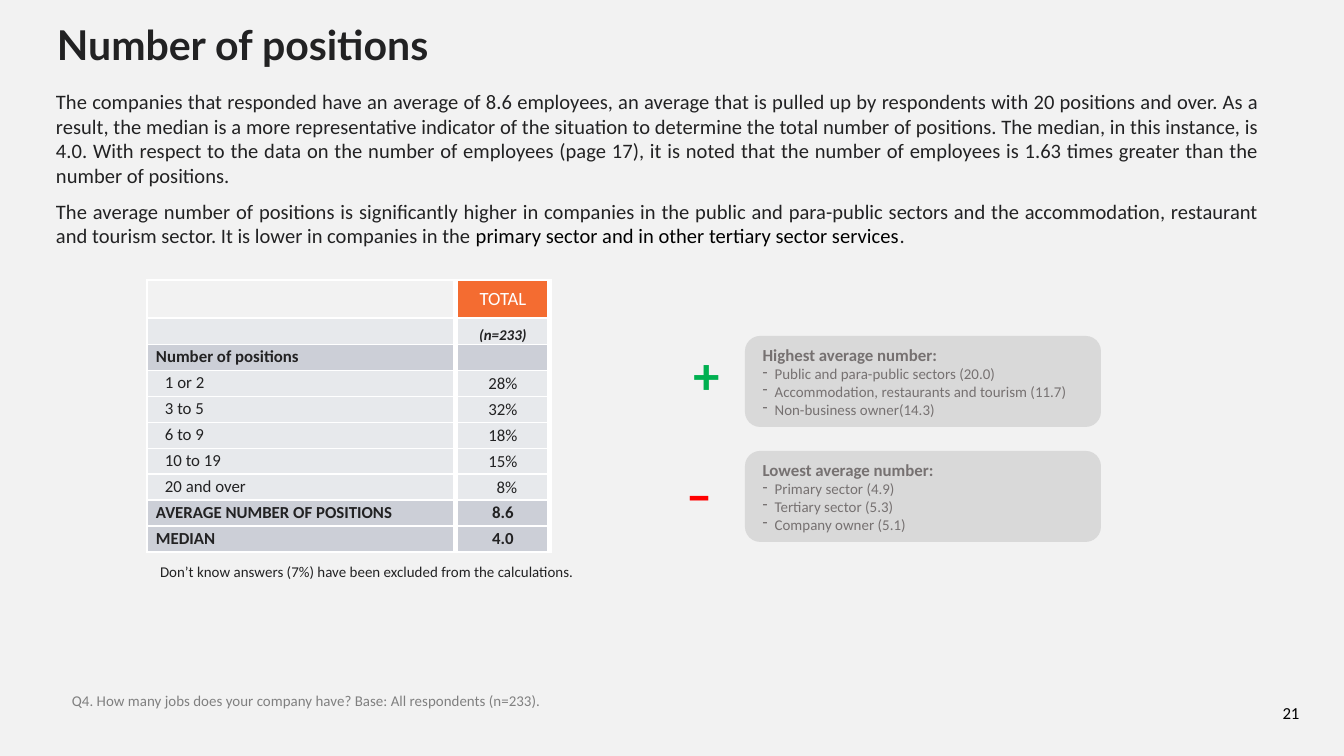
from lxml.etree import SubElement
from pptx import Presentation
from pptx.dml.color import RGBColor
from pptx.enum.shapes import MSO_SHAPE
from pptx.enum.text import MSO_ANCHOR, PP_ALIGN
from pptx.oxml import parse_xml
from pptx.oxml.ns import nsdecls, qn
from pptx.util import Emu, Pt

INK, WHITE, GREY = "222223", "FFFFFF", "767171"
LIGHT_ROW, DARK_ROW = "E7E9EC", "CCCFD7"


def px(length):
    return Emu(round(length * 914400 / 134.4))


def color(hex_value):
    return RGBColor.from_string(hex_value)


def add_run(paragraph, text, size, hex_value=INK, bold=False, italic=False, face="Calibri"):
    run = paragraph.add_run()
    run.text = text
    font = run.font
    font.name, font.size, font.bold, font.italic = face, Pt(size), bold, italic
    font.color.rgb = color(hex_value)


def set_insets(target, left, top, right, bottom):
    target.margin_left, target.margin_top = px(left), px(top)
    target.margin_right, target.margin_bottom = px(right), px(bottom)


def add_text_frame(slide, box, insets=(13, 7, 13, 7), anchor=MSO_ANCHOR.TOP):
    frame = slide.shapes.add_textbox(*map(px, box)).text_frame
    frame.word_wrap = True
    frame.vertical_anchor = anchor
    set_insets(frame, *insets)
    return frame


def add_line(slide, box, text, size, hex_value=INK, bold=False, align=PP_ALIGN.LEFT,
             anchor=MSO_ANCHOR.TOP, face="Calibri"):
    paragraph = add_text_frame(slide, box, anchor=anchor).paragraphs[0]
    paragraph.alignment = align
    add_run(paragraph, text, size, hex_value, bold, face=face)


def add_title(slide, box):
    frame = add_text_frame(slide, box, (10, 5, 10, 5), MSO_ANCHOR.MIDDLE)
    frame.paragraphs[0].line_spacing = 0.9
    add_run(frame.paragraphs[0], "Number of positions", 22, bold=True, face="Lato")


def add_commentary(slide, box):
    frame = add_text_frame(slide, box, (13, 0, 13, 0))
    average, sectors = frame.paragraphs[0], frame.add_paragraph()
    average.alignment = sectors.alignment = PP_ALIGN.JUSTIFY
    sectors.space_before = Pt(6)
    add_run(average, "The companies that responded have an average of 8.6 employees, an average "
            "that is pulled up by respondents with 20 positions and over. As a result, the median "
            "is a more representative indicator of the situation to determine the total number of "
            "positions. The median, in this instance, is 4.0. With respect to the data on the "
            "number of employees (page 17), it is noted that the number of employees is 1.63 times "
            "greater than the number of positions.", 11)
    add_run(sectors, "The average number of positions is significantly higher in companies in the "
            "public and para-public sectors and the accommodation, restaurant and tourism sector. "
            "It is lower in companies in the", 11)
    add_run(sectors, " primary sector and in other tertiary sector services", 11, "000000")
    add_run(sectors, ".", 11)


def set_borders(cell, **widths):
    properties = cell._tc.get_or_add_tcPr()
    for position, side in enumerate("LRTB"):
        properties.insert(position, parse_xml(
            f'<a:ln{side} {nsdecls("a")} w="{Pt(widths.get(side, 0.75))}">'
            f'<a:solidFill><a:srgbClr val="{WHITE}"/></a:solidFill></a:ln{side}>'))


def fill_cell(cell, text, fill, insets, size=9, hex_value=INK, bold=False, italic=False,
              align=PP_ALIGN.LEFT):
    cell.vertical_anchor = MSO_ANCHOR.MIDDLE
    set_insets(cell, *insets)
    if fill:
        cell.fill.solid()
        cell.fill.fore_color.rgb = color(fill)
    else:
        cell.fill.background()
    paragraph = cell.text_frame.paragraphs[0]
    paragraph.alignment = align
    if text:
        add_run(paragraph, text, size, hex_value, bold, italic)
    else:
        SubElement(paragraph._p, qn("a:endParaRPr")).set("sz", str(size * 100))


def add_positions_table(slide, box):
    answers = [("1 or 2", "28%"), ("3 to 5", "32%"), ("6 to 9", "18%"),
               ("10 to 19", "15%"), ("20 and over", "8%")]
    rows = [("Number of positions", ""), *answers,
            ("AVERAGE NUMBER OF POSITIONS", "8.6"), ("MEDIAN", "4.0")]
    table = slide.shapes.add_table(len(rows) + 2, 2, *map(px, box)).table
    table.first_row = table.horz_banding = False
    for column, width in zip(table.columns, (309, 94)):
        column.width = px(width)
    for index, row in enumerate(table.rows):
        row.height = px(26 if index else 38)

    # Header and base
    flat = (0, 0, 0, 0)
    fill_cell(table.cell(0, 0), "", None, flat)
    fill_cell(table.cell(0, 1), "TOTAL", "F46C31", flat, 10, WHITE, align=PP_ALIGN.CENTER)
    fill_cell(table.cell(1, 0), "", LIGHT_ROW, flat)
    base = table.cell(1, 1)
    fill_cell(base, "(n=233)", LIGHT_ROW, (17, 0, 17, 0), 8, bold=True, italic=True,
              align=PP_ALIGN.CENTER)
    base.text_frame.paragraphs[0].line_spacing = Pt(14)

    # Answers and summary rows
    for index, (label, value) in enumerate(rows, start=2):
        is_answer = (label, value) in answers
        fill = LIGHT_ROW if is_answer else DARK_ROW
        fill_cell(table.cell(index, 0), label, fill, (18 if is_answer else 9, 0, 9, 0),
                  bold=not is_answer)
        # A one-digit share is set under the units of the others
        left = 9 if value == "8%" else 1
        fill_cell(table.cell(index, 1), value, fill, (left, 1 if is_answer else 0, 1, 0),
                  bold=not is_answer, align=PP_ALIGN.CENTER)

    for index in range(len(table.rows)):
        set_borders(table.cell(index, 0), R=3)
        set_borders(table.cell(index, 1), L=3, R=3)


def add_callout(slide, box, heading, items):
    callout = slide.shapes.add_shape(MSO_SHAPE.ROUNDED_RECTANGLE, *map(px, box))
    callout.shadow.inherit = False
    callout.fill.solid()
    callout.fill.fore_color.rgb = color("D9D9D9")
    callout.line.fill.background()
    frame = callout.text_frame
    frame.word_wrap = True
    frame.vertical_anchor = MSO_ANCHOR.MIDDLE
    frame.paragraphs[0].alignment = PP_ALIGN.LEFT
    add_run(frame.paragraphs[0], heading, 9, GREY, bold=True)
    for item in items:
        paragraph = frame.add_paragraph()
        paragraph.alignment = PP_ALIGN.LEFT
        properties = paragraph._p.get_or_add_pPr()
        properties.set("marL", str(px(12)))
        properties.set("indent", str(-px(12)))
        SubElement(properties, qn("a:buChar")).set("char", "-")
        add_run(paragraph, item, 8, GREY)


def main():
    presentation = Presentation()
    presentation.slide_width, presentation.slide_height = px(1344), px(756)
    slide = presentation.slides.add_slide(presentation.slide_layouts[6])
    slide.background.fill.solid()
    slide.background.fill.fore_color.rgb = color("F2F2F2")

    # Title and commentary
    add_title(slide, (47, 23, 1261, 48))
    add_commentary(slide, (43, 89, 1230, 160))

    # Table and its note
    add_positions_table(slide, (147, 280, 403, 272))
    add_line(slide, (147, 556, 493, 32),
             "Don’t know answers (7%) have been excluded from the calculations.", 8)

    # Highest and lowest averages
    add_callout(slide, (745, 336, 356, 91), "Highest average number:",
                ["Public and para-public sectors (20.0)",
                 "Accommodation, restaurants and tourism (11.7)", "Non-business owner(14.3)"])
    add_callout(slide, (745, 451, 356, 91), "Lowest average number:",
                ["Primary sector (4.9)", "Tertiary sector (5.3)", "Company owner (5.1)"])
    add_line(slide, (640, 335, 133, 77), "+", 28, "00B050", True, PP_ALIGN.CENTER)
    add_line(slide, (635, 454, 128, 77), "–", 28, "FF0000", True, PP_ALIGN.CENTER)

    # Question and page number
    add_line(slide, (59, 685, 863, 32),
             "Q4. How many jobs does your company have? Base: All respondents (n=233).",
             8, "808080")
    add_line(slide, (1257, 689, 68, 41), "21", 9, "000000", align=PP_ALIGN.CENTER,
             anchor=MSO_ANCHOR.BOTTOM)

    presentation.save("out.pptx")


if __name__ == "__main__":
    main()
